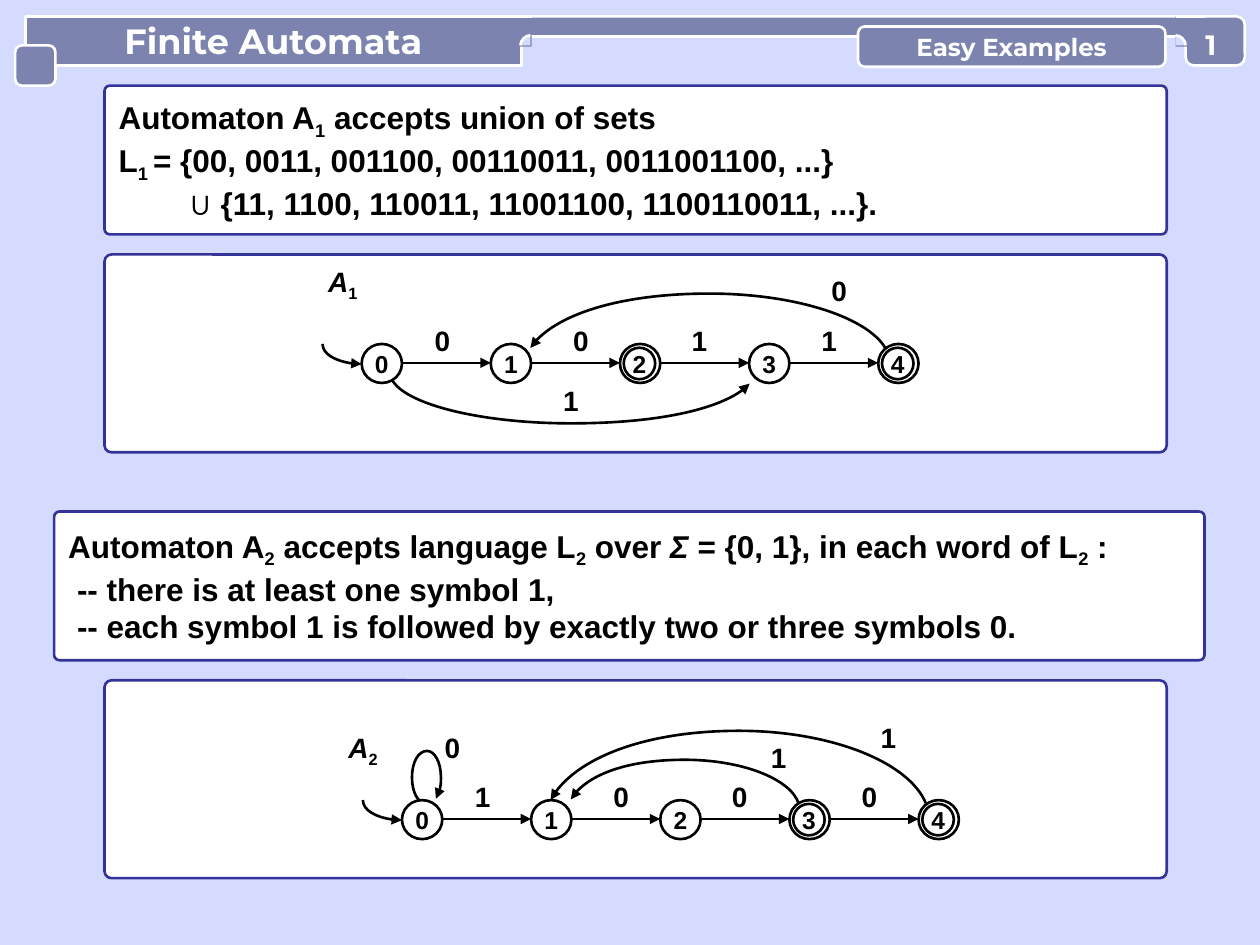
from dataclasses import dataclass

import lxml.etree
import pptx
import pptx.dml.color
import pptx.enum.shapes
import pptx.enum.text
import pptx.oxml.ns
import pptx.util

Inches = pptx.util.Inches
Pt = pptx.util.Pt
qn = pptx.oxml.ns.qn
Shape = pptx.enum.shapes.MSO_SHAPE
Align = pptx.enum.text.PP_ALIGN
Anchor = pptx.enum.text.MSO_ANCHOR


@dataclass(frozen=True)
class Theme:
    backdrop: str = "D5DAFF"
    bar: str = "7D83AF"
    frame: str = "333399"
    white: str = "FFFFFF"
    ink: str = "000000"
    heading: str = "Montserrat"
    body: str = "Arial"
    title_size: int = 20
    section_size: int = 14
    number_size: int = 16
    statement_size: int = 18
    label_size: int = 16
    state_size: int = 14
    stroke: float = 1.5


THEME = Theme()
SUB, ITALIC = "sub", "italic"
STATE_STEP = 1.025
STATE_SIZE = 0.32
LABEL_OFFSETS = (0.48, 1.58, 2.52, 3.55)
ARC = ((0, 0.9), (0.056, 0.375), (0.26, 0), (0.5, 0), (0.75, 0), (0.965, 0.43), (1, 1))


def rgb(color):
    return pptx.dml.color.RGBColor.from_string(color)


def paint(box, fill=None, line=None):
    if fill:
        box.fill.solid()
        box.fill.fore_color.rgb = rgb(fill)
    else:
        box.fill.background()
    if line:
        box.line.color.rgb = rgb(line)
        box.line.width = Pt(THEME.stroke)
    else:
        box.line.fill.background()


def add_arrowhead(box):
    line = box._element.spPr.find(qn("a:ln"))
    lxml.etree.SubElement(line, qn("a:tailEnd"), type="triangle")


def set_frame(box, inset=0.0, anchor=Anchor.MIDDLE):
    frame = box.text_frame
    frame.auto_size = pptx.enum.text.MSO_AUTO_SIZE.NONE
    frame.word_wrap = False
    frame.vertical_anchor = anchor
    frame.margin_left = frame.margin_right = Inches(inset)
    frame.margin_top = frame.margin_bottom = 0
    return frame


def write(para, spans, size, font=THEME.body, color=THEME.ink, align=Align.CENTER):
    para.alignment = align
    para.font.name = font
    para.font.size = Pt(size)
    para.font.bold = True
    para.font.color.rgb = rgb(color)
    for text, style in spans:
        span = para.add_run()
        span.text = text
        if style == SUB:
            span._r.get_or_add_rPr().set("baseline", "-25000")
        elif style == ITALIC:
            span.font.italic = True


def add_shape(page, kind, at, fill, line=None, corner=None):
    box = page.shapes.add_shape(kind, *map(Inches, at))
    box.shadow.inherit = False
    paint(box, fill, line)
    if corner is not None:
        box.adjustments[0] = corner
    return box


def add_line(page, start, end, color, arrow=False):
    line = page.shapes.add_connector(
        pptx.enum.shapes.MSO_CONNECTOR.STRAIGHT, *map(Inches, (*start, *end)))
    line.line.color.rgb = rgb(color)
    line.line.width = Pt(THEME.stroke)
    if arrow:
        add_arrowhead(line)
    lxml.etree.SubElement(line._element.spPr, qn("a:effectLst"))


def add_curve(page, points, fill=None, line=None, arrow=False, closing=()):
    nodes = [(Inches(x), Inches(y)) for x, y in (*points, *closing)]
    builder = page.shapes.build_freeform(*nodes[0])
    builder.add_line_segments(nodes[1:], close=bool(closing))
    box = builder.convert_to_shape()
    box.shadow.inherit = False
    paint(box, fill, line)
    segments = list(box._element.iter(qn("a:lnTo")))[:len(points) - 1]
    for first in range(0, len(segments), 3):
        bezier = lxml.etree.Element(qn("a:cubicBezTo"))
        segments[first].addprevious(bezier)
        for segment in segments[first:first + 3]:
            bezier.append(segment[0])
            segment.getparent().remove(segment)
    if arrow:
        add_arrowhead(box)


def add_arc(page, tip_x, tail_x, tail_y, apex_y):
    points = [(tip_x + across * (tail_x - tip_x), apex_y + down * (tail_y - apex_y))
              for across, down in reversed(ARC)]
    add_curve(page, points, line=THEME.ink, arrow=True)


def add_label(page, left, top, spans):
    box = page.shapes.add_textbox(*map(Inches, (left, top, 0.32, 0.31)))
    frame = set_frame(box, anchor=Anchor.TOP)
    frame.word_wrap = True
    write(frame.paragraphs[0], spans, THEME.label_size)


def add_state(page, left, top, name, accepting):
    box = add_shape(page, Shape.OVAL, (left, top, STATE_SIZE, 0.31), THEME.white, THEME.ink)
    if accepting:
        box = add_shape(page, Shape.OVAL, (left + 0.03, top + 0.03, 0.25, 0.25),
                        THEME.white, THEME.ink)
    write(set_frame(box).paragraphs[0], [(name, None)], THEME.state_size)


def add_automaton(page, left, top, symbols, accepting):
    add_curve(page, [(left - 0.31, top), (left - 0.31, top + 0.08),
                     (left - 0.17, top + 0.16), (left, top + 0.16)],
              line=THEME.ink, arrow=True)
    for index, symbol in enumerate(symbols):
        x = left + index * STATE_STEP
        add_line(page, (x + STATE_SIZE, top + 0.15), (x + STATE_STEP, top + 0.15),
                 THEME.ink, arrow=True)
        add_label(page, left + LABEL_OFFSETS[index], top - 0.16, [(symbol, None)])
    for index in range(len(symbols) + 1):
        add_state(page, left + index * STATE_STEP, top, str(index), index in accepting)


def shape_placeholder(box, at, corner, fill, line):
    box.left, box.top, box.width, box.height = map(Inches, at)
    geometry = lxml.etree.SubElement(box._element.spPr, qn("a:prstGeom"), prst="roundRect")
    values = lxml.etree.SubElement(geometry, qn("a:avLst"))
    lxml.etree.SubElement(values, qn("a:gd"), name="adj", fmla=f"val {round(corner * 100000)}")
    paint(box, fill, line)


def fill_statement(box, at, lines):
    shape_placeholder(box, at, 0.035, THEME.white, THEME.frame)
    frame = set_frame(box, inset=0.1)
    for index, (indent, spans) in enumerate(lines):
        para = frame.add_paragraph() if index else frame.paragraphs[0]
        para.space_before = Pt(0)
        properties = para._p.get_or_add_pPr()
        properties.set("marL", str(Inches(indent)))
        properties.set("indent", "0")
        lxml.etree.SubElement(properties, qn("a:buNone"))
        write(para, spans, THEME.statement_size, align=Align.LEFT)


def add_bar_joint(page, square_left, edge, inner):
    add_shape(page, Shape.RECTANGLE, (square_left, 0.13, 0.24, 0.24), THEME.bar)
    add_line(page, (square_left, 0.13), (square_left + 0.24, 0.13), THEME.white)
    bend = edge + (inner - edge) / 2
    points = [(edge, 0.28), (bend, 0.28), (inner, 0.32), (inner, 0.36)]
    add_curve(page, points, fill=THEME.backdrop, closing=[(edge, 0.36)])
    add_curve(page, points, line=THEME.white)


def add_header(page):
    title = page.shapes.title
    shape_placeholder(title, (0.2, 0.13, 3.94, 0.39), 0.188, THEME.bar, THEME.white)
    write(set_frame(title).paragraphs[0], [("Finite Automata", None)],
          THEME.title_size, THEME.heading, THEME.white)
    add_shape(page, Shape.ROUNDED_RECTANGLE, (4.06, 0.13, 5.43, 0.16),
              THEME.bar, THEME.white, 0.5)
    add_bar_joint(page, 3.98, 4.21, 4.13)
    tabs = [((0.12, 0.36, 0.32, 0.32), "", THEME.section_size),
            ((9.41, 0.13, 0.47, 0.39), "", THEME.section_size),
            ((6.81, 0.21, 2.44, 0.32), "Easy Examples", THEME.section_size)]
    for at, text, size in tabs:
        box = add_shape(page, Shape.ROUNDED_RECTANGLE, at, THEME.bar, THEME.white, 0.17)
        if text:
            write(set_frame(box).paragraphs[0], [(text, None)], size,
                  THEME.heading, THEME.white)
    add_bar_joint(page, 9.33, 9.33, 9.41)
    number = page.shapes.add_textbox(*map(Inches, (9.41, 0.22, 0.4, 0.27)))
    write(set_frame(number).paragraphs[0], [("1", None)], THEME.number_size,
          THEME.heading, THEME.white)


def main():
    deck = pptx.Presentation()
    deck.slide_width, deck.slide_height = Inches(10), Inches(7.5)
    page = deck.slides.add_slide(deck.slide_layouts[3])
    page.background.fill.solid()
    page.background.fill.fore_color.rgb = rgb(THEME.backdrop)
    add_header(page)

    fill_statement(page.placeholders[1], (0.83, 0.68, 8.43, 1.18), [
        (0, [("Automaton A", None), ("1", SUB), (" accepts union of sets", None)]),
        (0, [("L", None), ("1 ", SUB),
             ("= {00, 0011, 001100, 00110011, 0011001100, ...}", None)]),
        (0.56, [("∪ {11, 1100, 110011, 11001100, 1100110011, ...}.", None)])])
    fill_statement(page.placeholders[2], (0.43, 4.06, 9.13, 1.18), [
        (0, [("Automaton A", None), ("2", SUB), (" accepts language L", None), ("2", SUB),
             (" over ", None), ("Σ", ITALIC), (" = {0, 1}, in each word of L", None),
             ("2", SUB), (" :", None)]),
        (0.07, [("-- there is at least one symbol 1,", None)]),
        (0.07, [("-- each symbol 1 is followed by exactly two or three symbols 0.", None)])])
    for top in (2.02, 5.4):
        add_shape(page, Shape.ROUNDED_RECTANGLE, (0.83, top, 8.43, 1.57),
                  THEME.white, THEME.frame, 0.035)

    add_arc(page, 4.21, 7.05, 2.81, 2.33)
    add_arc(page, 5.95, 3.11, 3.01, 3.36)
    add_automaton(page, 2.87, 2.73, "0011", (2, 4))
    add_arc(page, 4.37, 7.36, 6.41, 5.8)
    add_arc(page, 4.53, 6.34, 6.38, 6.03)
    add_curve(page, [(3.39, 6.38), (3.32, 6.38), (3.27, 6.29), (3.27, 6.17), (3.27, 6.05),
                     (3.32, 5.96), (3.39, 5.96), (3.45, 5.96), (3.5, 6.05), (3.5, 6.17),
                     (3.5, 6.23), (3.49, 6.3), (3.46, 6.34)], line=THEME.ink, arrow=True)
    add_automaton(page, 3.19, 6.35, "1000", (3, 4))
    for left, top, symbol in [(6.5, 2.17, "0"), (4.37, 3.04, "1"), (3.43, 5.8, "0"),
                              (6.02, 5.88, "1"), (6.89, 5.72, "1")]:
        add_label(page, left, top, [(symbol, None)])
    for left, top, index in [(2.56, 2.1, "1"), (2.72, 5.8, "2")]:
        add_label(page, left, top, [("A", ITALIC), (index, SUB)])
    deck.save("out.pptx")


if __name__ == "__main__":
    main()
